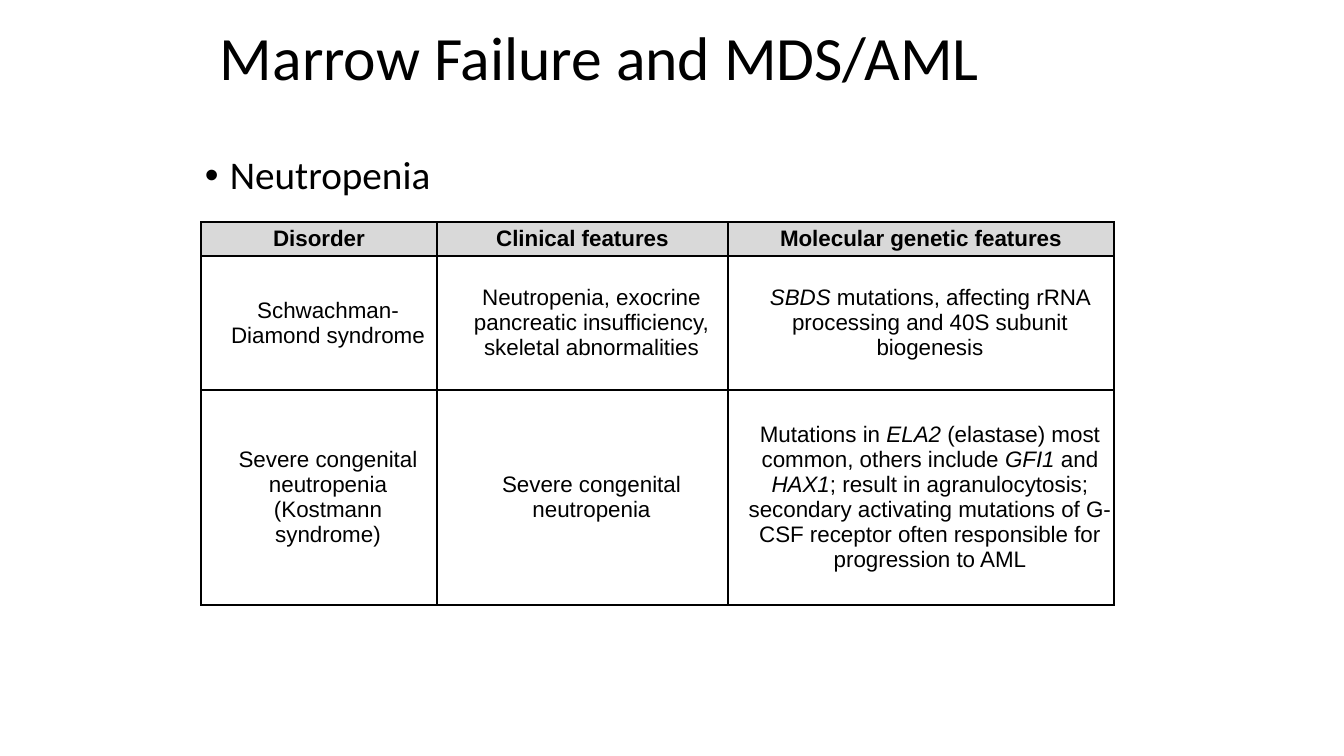
from lxml import etree
from pptx import Presentation
from pptx.dml.color import RGBColor
from pptx.enum.text import MSO_ANCHOR, PP_ALIGN
from pptx.oxml.ns import qn
from pptx.util import Emu, Pt

CENTER, LEFT = PP_ALIGN.CENTER, PP_ALIGN.LEFT
MIDDLE, TOP = MSO_ANCHOR.MIDDLE, MSO_ANCHOR.TOP

BLACK = RGBColor(0x00, 0x00, 0x00)
HEADER_GRAY = RGBColor(0xD9, 0xD9, 0xD9)

EMU_PER_PX = 914400 / 100.8
COL_WIDTHS = [236, 291, 386]
ROW_HEIGHTS = [34, 134, 215]
CELL_INDENT = 18
BULLET_INDENT = 25

# Each cell is a list of paragraphs; asterisks enclose italic gene names
ROWS = [
    [["Disorder"], ["Clinical features"], ["Molecular genetic features"]],
    [["Schwachman-Diamond syndrome"],
     ["Neutropenia, exocrine pancreatic insufficiency, skeletal abnormalities"],
     ["*SBDS* mutations, affecting rRNA processing and 40S subunit biogenesis"]],
    [["Severe congenital neutropenia", "(Kostmann syndrome)"],
     ["Severe congenital neutropenia"],
     ["Mutations in *ELA2* (elastase) most common, others include *GFI1* and "
      "*HAX1*; result in agranulocytosis; secondary activating mutations of "
      "G-CSF receptor often responsible for progression to AML"]],
]


def px(n):
    return Emu(round(n * EMU_PER_PX))


def write(p, text, font="Calibri", size=28, bold=False, align=LEFT,
          spacing=None, indent=0, bullet=None):
    """Fill a paragraph, setting text between asterisks in italics."""
    pPr = p._p.get_or_add_pPr()
    if indent:
        pPr.set("marL", str(px(indent)))
        pPr.set("indent", str(-px(indent) if bullet else 0))
    if bullet:
        etree.SubElement(pPr, qn("a:buFont"), typeface="Arial")
        etree.SubElement(pPr, qn("a:buChar"), char=bullet)
    p.alignment = align
    if spacing:
        p.line_spacing = spacing
    for i, part in enumerate(text.split("*")):
        if part:
            r = p.add_run()
            r.text = part
            r.font.name, r.font.size = font, Pt(size)
            r.font.bold, r.font.italic = bold, i % 2 == 1
            r.font.color.rgb = BLACK


def add_text(slide, text, x, y, w, h, anchor=TOP, **fmt):
    tf = slide.shapes.add_textbox(px(x), px(y), px(w), px(h)).text_frame
    tf.word_wrap = True
    tf.vertical_anchor = anchor
    write(tf.paragraphs[0], text, **fmt)


def add_borders(cell):
    tcPr = cell._tc.get_or_add_tcPr()
    for side in ("a:lnL", "a:lnR", "a:lnT", "a:lnB"):
        ln = etree.SubElement(tcPr, qn(side), w=str(Pt(1)))
        fill = etree.SubElement(ln, qn("a:solidFill"))
        etree.SubElement(fill, qn("a:srgbClr"), val=str(BLACK))


def fill_cell(cell, paragraphs, header):
    cell.margin_left = cell.margin_right = 0
    cell.margin_top = cell.margin_bottom = 0
    cell.vertical_anchor = MIDDLE
    add_borders(cell)
    if header:
        cell.fill.solid()
        cell.fill.fore_color.rgb = HEADER_GRAY
    else:
        cell.fill.background()
    tf = cell.text_frame
    for i, text in enumerate(paragraphs):
        p = tf.add_paragraph() if i else tf.paragraphs[0]
        write(p, text, font="Arial", size=16, bold=header, align=CENTER,
              indent=0 if header else CELL_INDENT)


def add_disorder_table(slide, x, y):
    table = slide.shapes.add_table(
        len(ROWS), len(COL_WIDTHS), px(x), px(y),
        px(sum(COL_WIDTHS)), px(sum(ROW_HEIGHTS))).table
    table.first_row = table.horz_banding = False
    for col, width in zip(table.columns, COL_WIDTHS):
        col.width = px(width)
    for row, height in zip(table.rows, ROW_HEIGHTS):
        row.height = px(height)
    for r, cells in enumerate(ROWS):
        for c, paragraphs in enumerate(cells):
            fill_cell(table.cell(r, c), paragraphs, header=r == 0)


def main():
    prs = Presentation()
    prs.slide_width, prs.slide_height = px(1344), px(756)
    slide = prs.slides.add_slide(prs.slide_layouts[6])

    # Title
    add_text(slide, "Marrow Failure and MDS/AML", 210, 16, 921, 89,
             anchor=MIDDLE, size=44, spacing=0.9)

    # Table of disorders
    add_disorder_table(slide, 201, 222)

    # Topic bullet
    add_text(slide, "Neutropenia", 195, 151, 940, 443,
             spacing=0.9, indent=BULLET_INDENT, bullet="•")

    prs.save("out.pptx")


if __name__ == "__main__":
    main()
